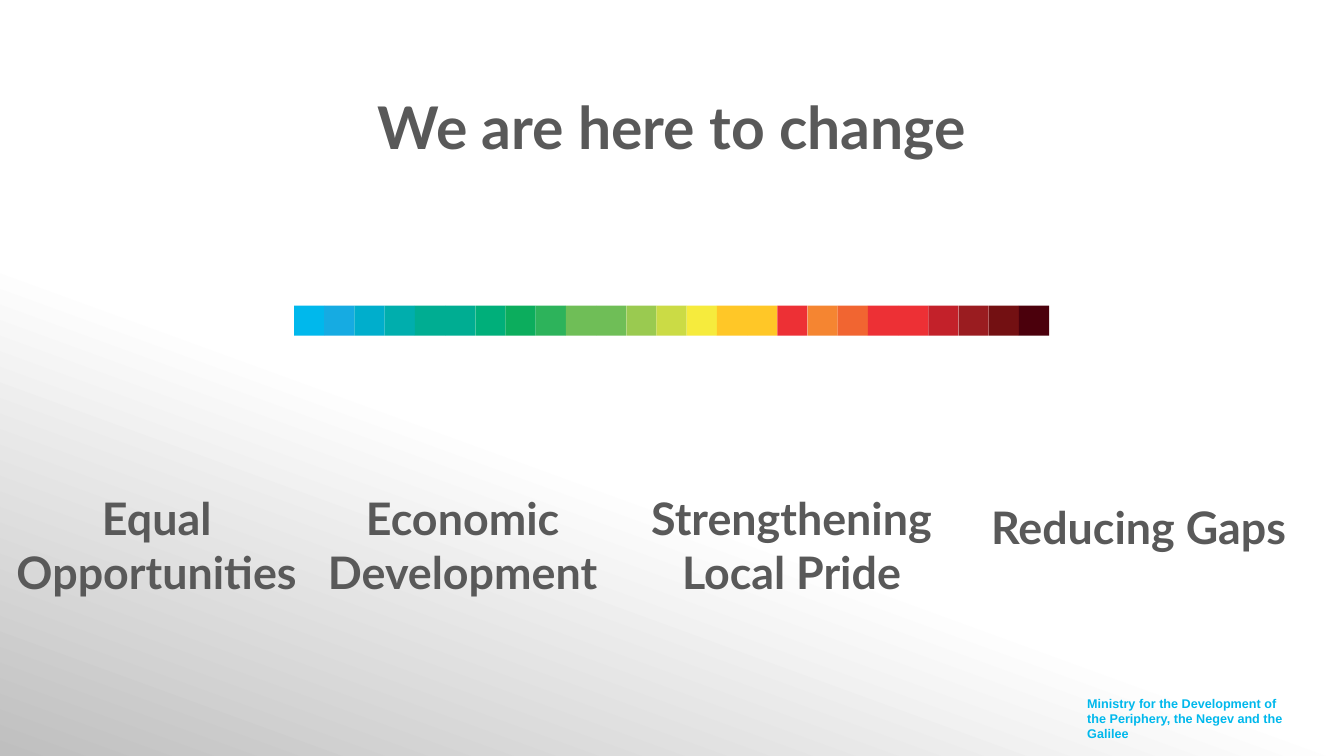
from lxml import etree
from pptx import Presentation
from pptx.dml.color import RGBColor
from pptx.enum.shapes import MSO_SHAPE
from pptx.enum.text import MSO_ANCHOR, MSO_AUTO_SIZE, PP_ALIGN
from pptx.oxml.ns import qn
from pptx.util import Cm, Pt

RECTANGLE = MSO_SHAPE.RECTANGLE
TOP, MIDDLE = MSO_ANCHOR.TOP, MSO_ANCHOR.MIDDLE
NO_FIT, GROW = MSO_AUTO_SIZE.NONE, MSO_AUTO_SIZE.SHAPE_TO_FIT_TEXT
LEFT, CENTER = PP_ALIGN.LEFT, PP_ALIGN.CENTER

WHITE = RGBColor(0xFF, 0xFF, 0xFF)
SILVER = RGBColor(0xBF, 0xBF, 0xBF)
CHARCOAL = RGBColor(0x59, 0x59, 0x59)
SKY = RGBColor(0x00, 0xB8, 0xEC)

HEADLINE = ("We are here to change", (2.77, 2.03, 28.32, 2.31))
FIRST_GOAL = ("Equal Opportunities", (-0.28, 12.93, 8.46, 1.6))
WRAPPED_GOALS = [
    ("Economic Development", (7.8, 12.93, 7.72, 1.6)),
    ("Strengthening Local Pride", (15.72, 12.52, 8.46, 2.39)),
]
LAST_GOAL = ("Reducing Gaps", (24.56, 12.47, 8.28, 1.63))
MINISTRY = (
    "Ministry for the Development of the Periphery, the Negev and the Galilee",
    (27.15, 17.4, 5.51, 1.42),
)
SPECTRUM = [RGBColor.from_string(code) for code in (
    "00B8EC 16ABE2 00AECC 00AEAD 00AD92 00AD92 00AF7A 0CAD5D 2DB35B "
    "6FBE57 6FBE57 9ACA50 CBDB45 F6EB3D FFC727 FFC727 ED3035 F58531 "
    "F16531 ED3035 ED3035 C3212A 9A1C20 731012 4B000C"
).split()]
SPECTRUM_LEFT, SPECTRUM_TOP, SPECTRUM_WIDTH = 7.41, 7.7, 19.03


def write(holder, text, box, size=32, font="Lato", color=CHARCOAL,
          align=CENTER, anchor=MIDDLE, wrap=True, fit=NO_FIT):
    """Place a text holder and fill it with one formatted paragraph."""
    holder.left, holder.top, holder.width, holder.height = map(Cm, box)
    frame = holder.text_frame
    frame.word_wrap = wrap
    frame.auto_size = fit
    frame.vertical_anchor = anchor
    paragraph = frame.paragraphs[0]
    paragraph.text = text
    paragraph.alignment = align
    paragraph.space_before = Pt(0)
    properties = paragraph._p.get_or_add_pPr()
    properties.set("marL", "0")
    properties.set("indent", "0")
    etree.SubElement(properties, qn("a:buNone"))
    paragraph.font.name = font
    paragraph.font.size = Pt(size)
    paragraph.font.bold = True
    paragraph.font.color.rgb = color


def main():
    """Build the slide and save it."""
    deck = Presentation()
    deck.slide_width, deck.slide_height = Cm(33.87), Cm(19.05)
    slide = deck.slides.add_slide(deck.slide_layouts[1])

    backdrop = slide.background.fill
    backdrop.gradient()
    backdrop.gradient_angle = 250
    for stop, position, color in zip(backdrop.gradient_stops, (0.6, 1), (WHITE, SILVER)):
        stop.position = position
        stop.color.rgb = color

    def new_box():
        return slide.shapes.add_textbox(0, 0, 0, 0)

    write(slide.shapes.title, *HEADLINE, size=42)
    write(slide.placeholders[1], *FIRST_GOAL)
    for goal in WRAPPED_GOALS:
        write(new_box(), *goal)
    write(new_box(), *LAST_GOAL, anchor=TOP, wrap=False, fit=GROW)
    write(new_box(), *MINISTRY, size=9, font="Arial", color=SKY,
          align=LEFT, anchor=TOP, fit=GROW)

    side = SPECTRUM_WIDTH / len(SPECTRUM)
    for index, color in enumerate(SPECTRUM):
        swatch = slide.shapes.add_shape(
            RECTANGLE, Cm(SPECTRUM_LEFT + index * side), Cm(SPECTRUM_TOP), Cm(side), Cm(side))
        swatch.shadow.inherit = False
        swatch.fill.solid()
        swatch.fill.fore_color.rgb = color
        swatch.line.fill.background()

    deck.save("out.pptx")


if __name__ == "__main__":
    main()
